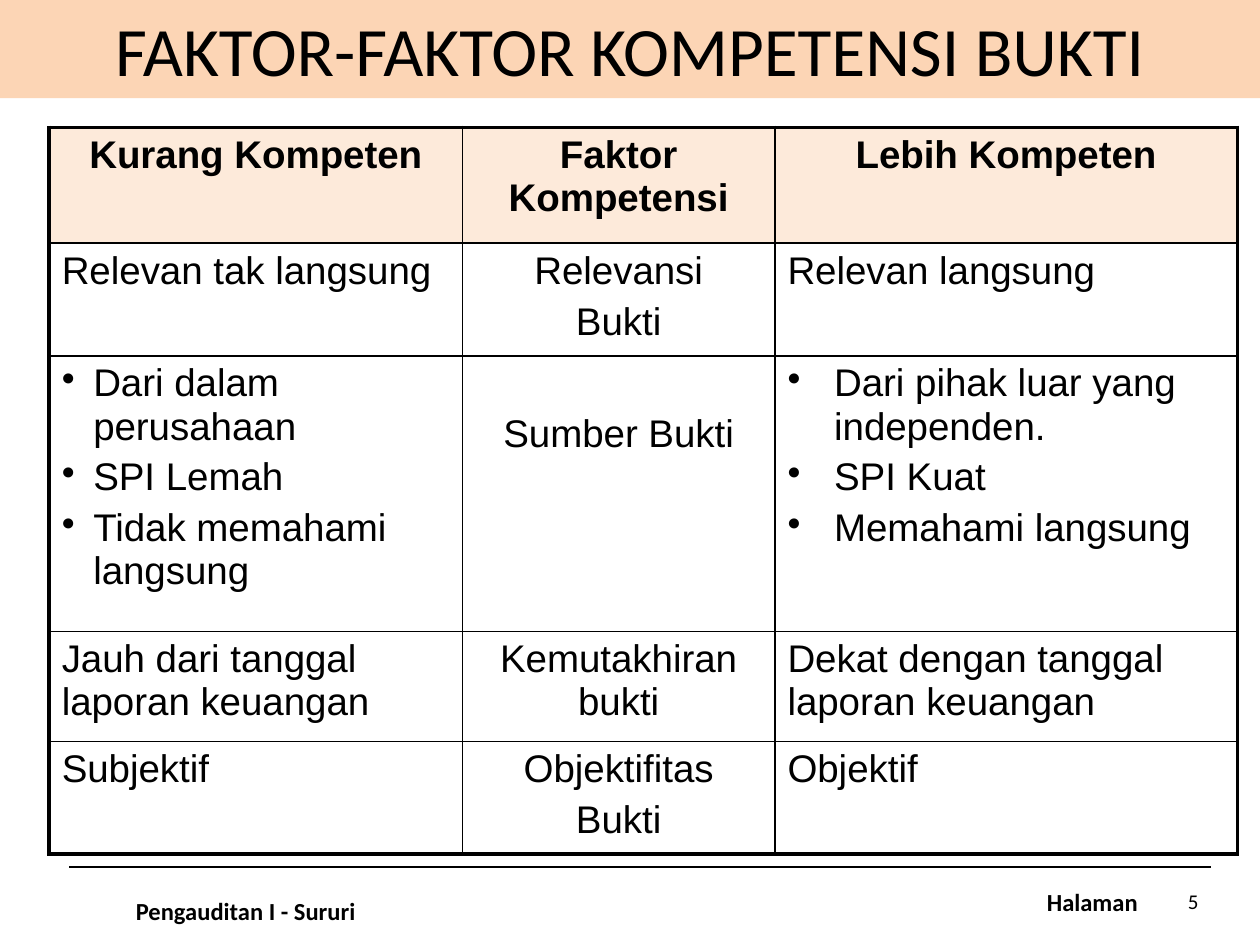
from lxml import etree
from pptx import Presentation
from pptx.dml.color import RGBColor
from pptx.enum import shapes, text
from pptx.oxml.ns import qn
from pptx.util import Inches, Pt

BLACK = RGBColor(0x00, 0x00, 0x00)
TITLE_FILL = RGBColor(0xFC, 0xD5, 0xB5)
HEADER_FILL = RGBColor(0xFD, 0xEA, 0xDA)
LEFT, CENTER, RIGHT = text.PP_ALIGN.LEFT, text.PP_ALIGN.CENTER, text.PP_ALIGN.RIGHT


def style(paragraph, size, font="Calibri", bold=False, align=LEFT):
    paragraph.alignment = align
    for run in paragraph.runs:
        run.font.size = Pt(size)
        run.font.name = font
        run.font.bold = bold
        run.font.color.rgb = BLACK


def add_border(cell, side, width):
    """Draw one side (L, R, T or B) of a cell; call before setting its fill."""
    line = etree.SubElement(cell._tc.get_or_add_tcPr(), qn(f"a:ln{side}"), w=str(Pt(width)))
    fill = etree.SubElement(line, qn("a:solidFill"))
    etree.SubElement(fill, qn("a:srgbClr"), val=str(BLACK))


prs = Presentation()
prs.slide_width, prs.slide_height = Inches(10), Inches(7.5)
slide = prs.slides.add_slide(prs.slide_layouts[6])

# Title band
title = slide.shapes.add_shape(
    shapes.MSO_SHAPE.RECTANGLE, 0, 0, prs.slide_width, Inches(0.78))
title.shadow.inherit = False
title.fill.solid()
title.fill.fore_color.rgb = TITLE_FILL
title.line.fill.background()
title.text_frame.text = "FAKTOR-FAKTOR KOMPETENSI BUKTI"
title.text_frame.vertical_anchor = text.MSO_ANCHOR.MIDDLE
style(title.text_frame.paragraphs[0], 39.6, align=CENTER)

# Footer
rule = slide.shapes.add_connector(
    shapes.MSO_CONNECTOR.STRAIGHT, Inches(0.55), Inches(6.88), Inches(9.61), Inches(6.88))
rule.line.color.rgb = BLACK
rule.line.width = Pt(1.5)
etree.SubElement(rule._element.spPr, qn("a:effectLst"))

footers = [
    ("Halaman", 8.21, 6.99, 0.93, 0.34, 14, True, LEFT),
    ("Pengauditan I - Sururi", 0.98, 7.06, 2, 0.34, 14, True, LEFT),
    ("5", 9.14, 6.95, 0.47, 0.4, 12, False, RIGHT),
]
for words, left, top, width, height, size, bold, align in footers:
    footer = slide.shapes.add_textbox(Inches(left), Inches(top), Inches(width), Inches(height))
    footer.text_frame.text = words
    footer.text_frame.word_wrap = align == RIGHT
    footer.text_frame.vertical_anchor = (
        text.MSO_ANCHOR.MIDDLE if align == RIGHT else text.MSO_ANCHOR.TOP)
    style(footer.text_frame.paragraphs[0], size, bold=bold, align=align)

# Comparison table
factors = [
    ["Kurang Kompeten", "Faktor Kompetensi", "Lebih Kompeten"],
    ["Relevan tak langsung", "Relevansi\nBukti", "Relevan langsung"],
    ["Dari dalam perusahaan\nSPI Lemah\nTidak memahami langsung",
     "Sumber Bukti",
     "Dari pihak luar yang independen.\nSPI Kuat\nMemahami langsung"],
    ["Jauh dari tanggal laporan keuangan", "Kemutakhiran bukti",
     "Dekat dengan tanggal laporan keuangan"],
    ["Subjektif", "Objektifitas\nBukti", "Objektif"],
]
column_widths = [3.28, 2.48, 3.67]
row_heights = [0.92, 0.85, 2.19, 0.87, 0.84]
source_row = 2
bullet_indents = {0: 0.25, 2: 0.37}
last_row, last_column = len(row_heights) - 1, len(column_widths) - 1

table = slide.shapes.add_table(
    len(row_heights), len(column_widths), Inches(0.39), Inches(1.01),
    Inches(sum(column_widths)), Inches(sum(row_heights))).table
table.first_row = table.horz_banding = False
for column, width in zip(table.columns, column_widths):
    column.width = Inches(width)
for row, height in zip(table.rows, row_heights):
    row.height = Inches(height)

for r, factor in enumerate(factors):
    for c, words in enumerate(factor):
        cell = table.cell(r, c)
        outer_sides = {"L": c == 0, "R": c == last_column, "T": r == 0, "B": r == last_row}
        for side, outer in outer_sides.items():
            add_border(cell, side, 2.25 if outer else 1)
        if r == 0:
            cell.fill.solid()
            cell.fill.fore_color.rgb = HEADER_FILL
        else:
            cell.fill.background()

        cell.text_frame.text = words
        for i, paragraph in enumerate(cell.text_frame.paragraphs):
            if i > 0:
                paragraph.space_before = Pt(4.4)
            if r == source_row and c in bullet_indents:
                indent = Inches(bullet_indents[c])
                properties = paragraph._p.get_or_add_pPr()
                properties.set("marL", str(indent))
                properties.set("indent", str(-indent))
                etree.SubElement(properties, qn("a:buChar"), char="•")
            style(paragraph, 22, "Arial", bold=r == 0,
                  align=CENTER if r == 0 or c == 1 else LEFT)

table.cell(source_row, 1).margin_top = Inches(0.45)

prs.save("out.pptx")
